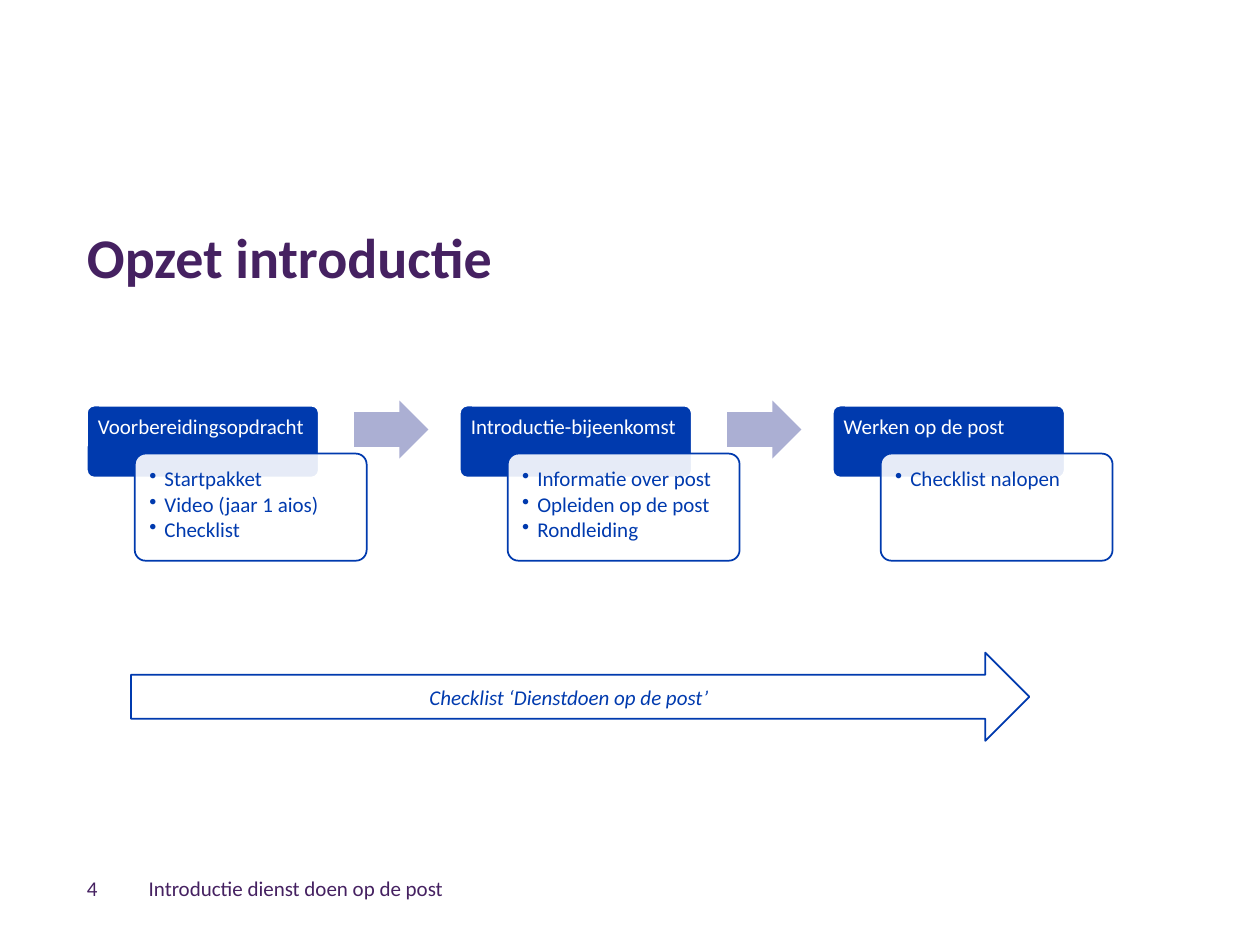
from lxml import etree
from pptx import Presentation
from pptx.dml.color import RGBColor
from pptx.enum import shapes, text
from pptx.oxml.ns import qn
from pptx.util import Inches, Pt

BLUE = RGBColor(0x00, 0x3A, 0xAE)
PURPLE = RGBColor(0x45, 0x21, 0x61)
LILAC = RGBColor(0xAB, 0xAF, 0xD3)
WHITE = RGBColor(0xFF, 0xFF, 0xFF)
SHAPE = shapes.MSO_SHAPE

prs = Presentation()
prs.slide_width, prs.slide_height = Inches(10), Inches(7.5)
slide = prs.slides.add_slide(prs.slide_layouts[5])


def add_block(kind, box, fill, line=None, opacity=100):
    block = slide.shapes.add_shape(kind, *map(Inches, box))
    block.shadow.inherit = False
    block.fill.solid()
    block.fill.fore_color.rgb = fill
    if opacity < 100:
        color = block.fill._xPr.find(qn("a:solidFill"))[0]
        etree.SubElement(color, qn("a:alpha"), val=str(opacity * 1000))
    if line is None:
        block.line.fill.background()
    else:
        block.line.color.rgb = line
        block.line.width = Pt(1)
    return block


def write(shape, lines, color, insets, anchor, size=12, align=text.PP_ALIGN.LEFT,
          spacing=None, after=None, bullet=False):
    frame = shape.text_frame
    frame.word_wrap = True
    frame.auto_size = text.MSO_AUTO_SIZE.NONE
    frame.vertical_anchor = anchor
    (frame.margin_left, frame.margin_top,
     frame.margin_right, frame.margin_bottom) = map(Inches, insets)
    frame.text = "\n".join(lines)
    for paragraph in frame.paragraphs:
        paragraph.alignment = align
        paragraph.line_spacing = spacing
        paragraph.space_after = after
        if bullet:
            props = paragraph._p.get_or_add_pPr()
            props.set("marL", str(Inches(0.12)))
            props.set("indent", str(-Inches(0.12)))
            etree.SubElement(props, qn("a:buChar"), char="•")
        for run in paragraph.runs:
            run.font.name = "Calibri"
            run.font.size = Pt(size)
            run.font.color.rgb = color
    return frame


# Title
title = slide.shapes.title
title.left, title.top, title.width, title.height = map(Inches, (0.69, 1.61, 8.62, 0.7))
heading = write(title, ["Opzet introductie"], PURPLE, (0, 0.05, 0.1, 0),
                text.MSO_ANCHOR.BOTTOM, size=32, spacing=0.9)
heading.paragraphs[0].runs[0].font.bold = True

# Three steps, each a header with an overlapping card
steps = [
    ("Voorbereidingsopdracht", ["Startpakket", "Video (jaar 1 aios)", "Checklist"]),
    ("Introductie-bijeenkomst",
     ["Informatie over post", "Opleiden op de post", "Rondleiding"]),
    ("Werken op de post", ["Checklist nalopen"]),
]
for index, (step, tasks) in enumerate(steps):
    left = 0.69 + index * 2.96
    header = add_block(SHAPE.ROUNDED_RECTANGLE, (left, 3.22, 1.84, 0.57), BLUE, WHITE)
    header.adjustments[0] = 0.1
    write(header, [step], WHITE, (0.07, 0.07, 0.07, 0.05), text.MSO_ANCHOR.TOP,
          spacing=0.9, after=Pt(4.2))
    card = add_block(SHAPE.ROUNDED_RECTANGLE, (left + 0.38, 3.6, 1.84, 0.85),
                     WHITE, BLUE, opacity=90)
    card.adjustments[0] = 0.1
    write(card, tasks, BLUE, (0.09, 0.09, 0.09, 0.09), text.MSO_ANCHOR.TOP,
          spacing=0.9, after=Pt(1.8), bullet=True)
    if index < len(steps) - 1:
        arrow = add_block(SHAPE.RIGHT_ARROW, (left + 2.12, 3.18, 0.59, 0.46), LILAC)
        arrow.adjustments[0] = 0.6

# Footer
for left, width, words in [(1.18, 4.72, "Introductie dienst doen op de post"),
                           (0.69, 0.47, "4")]:
    footer = slide.shapes.add_textbox(*map(Inches, (left, 6.85, width, 0.4)))
    write(footer, [words], PURPLE, (0, 0.05, 0.1, 0.05), text.MSO_ANCHOR.MIDDLE)

# Checklist arrow under all steps
checklist = add_block(SHAPE.RIGHT_ARROW, (1.04, 5.18, 7.13, 0.7), WHITE, BLUE, opacity=68)
caption = write(checklist, ["Checklist ‘Dienstdoen op de post’"], BLUE,
                (0.1, 0.05, 0.1, 0.05), text.MSO_ANCHOR.MIDDLE,
                align=text.PP_ALIGN.CENTER)
caption.paragraphs[0].runs[0].font.italic = True

prs.save("out.pptx")
